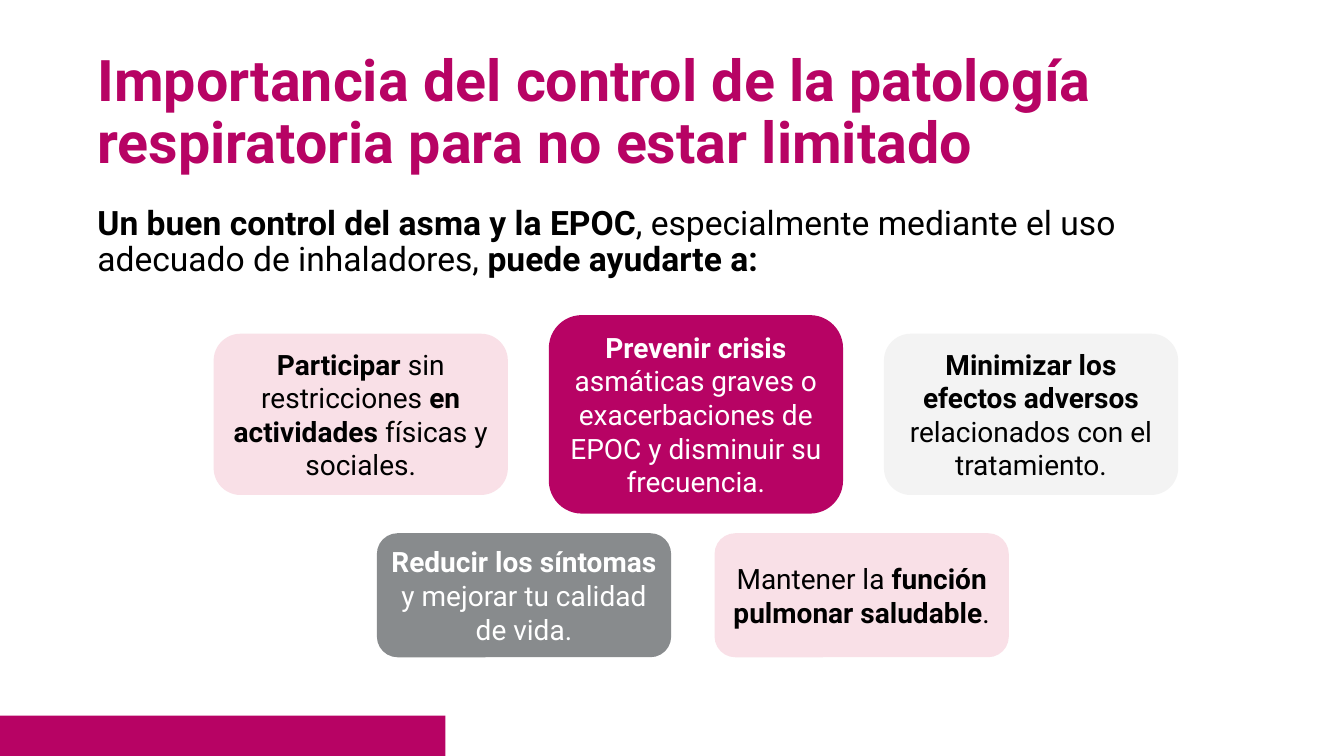
import dataclasses

import pptx
import pptx.dml.color
import pptx.enum.shapes
import pptx.enum.text
import pptx.util

Pt = pptx.util.Pt
SHAPES = pptx.enum.shapes.MSO_SHAPE
ANCHOR = pptx.enum.text.MSO_ANCHOR
ALIGN = pptx.enum.text.PP_ALIGN


@dataclasses.dataclass(frozen=True)
class Theme:
    font: str = "Roboto"
    magenta: str = "B70364"
    pink: str = "F9E0E7"
    gray: str = "888B8D"
    light: str = "F3F3F3"
    black: str = "000000"
    white: str = "FFFFFF"
    title_size: int = 41
    body_size: int = 24
    card_size: int = 20
    inset: float = 3.6


class Deck:
    def __init__(self, theme):
        self.theme = theme
        self.prs = pptx.Presentation()
        self.prs.slide_width, self.prs.slide_height = Pt(960), Pt(540)
        self.s = self.prs.slides.add_slide(self.prs.slide_layouts[5])

    def add_text(self, sp, runs, size, color, align, anchor, spacing=1.0):
        tf = sp.text_frame
        tf.word_wrap = True
        tf.auto_size = pptx.enum.text.MSO_AUTO_SIZE.NONE
        tf.vertical_anchor = anchor
        tf.margin_left = tf.margin_right = Pt(self.theme.inset)
        tf.margin_top = tf.margin_bottom = Pt(self.theme.inset)
        p = tf.paragraphs[0]
        p.alignment = align
        p.line_spacing = spacing
        for text, bold in runs:
            r = p.add_run()
            r.text = text
            r.font.name = self.theme.font
            r.font.size = Pt(size)
            r.font.bold = bold
            r.font.color.rgb = pptx.dml.color.RGBColor.from_string(color)

    def title(self, text, left, top, width, height):
        sp = self.s.shapes.title
        sp.left, sp.top, sp.width, sp.height = map(Pt, (left, top, width, height))
        self.add_text(sp, [(text, True)], self.theme.title_size, self.theme.magenta,
                      ALIGN.LEFT, ANCHOR.MIDDLE, 0.9)

    def body(self, runs, left, top, width, height):
        sp = self.s.shapes.add_textbox(*map(Pt, (left, top, width, height)))
        self.add_text(sp, runs, self.theme.body_size, self.theme.black,
                      ALIGN.LEFT, ANCHOR.TOP, 0.9)

    def box(self, kind, fill, left, top, width, height):
        sp = self.s.shapes.add_shape(kind, *map(Pt, (left, top, width, height)))
        sp.shadow.inherit = False
        sp.fill.solid()
        sp.fill.fore_color.rgb = pptx.dml.color.RGBColor.from_string(fill)
        sp.line.fill.background()
        return sp

    def card(self, runs, fill, color, left, middle, width, height):
        sp = self.box(SHAPES.ROUNDED_RECTANGLE, fill,
                      left, middle - height / 2, width, height)
        self.add_text(sp, runs, self.theme.card_size, color,
                      ALIGN.CENTER, ANCHOR.MIDDLE)

    def card_row(self, cards, left, middle, pitch, width):
        for i, (runs, fill, color, height) in enumerate(cards):
            self.card(runs, fill, color, left + i * pitch, middle, width, height)


def main():
    theme = Theme()
    deck = Deck(theme)
    margin, text_width, card_width = 66, 828, 210.2

    deck.box(SHAPES.RECTANGLE, theme.magenta, 0, 511.2, 318.2, 28.8)
    deck.title("Importancia del control de la patología respiratoria para no estar limitado",
               margin, 29, text_width, 104.4)
    deck.body([("Un buen control del asma y la EPOC", True),
               (", especialmente mediante el uso adecuado de inhaladores, ", False),
               ("puede ayudarte a:", True)],
              margin, 144, text_width, 83)

    top_cards = [
        ([("Participar", True), (" sin restricciones ", False),
          ("en actividades", True), (" físicas y sociales.", False)],
         theme.pink, theme.black, 115.2),
        ([("Prevenir crisis ", True),
          ("asmáticas graves o exacerbaciones de EPOC y disminuir su frecuencia.", False)],
         theme.magenta, theme.white, 141.8),
        ([("Minimizar los efectos adversos ", True),
          ("relacionados con el tratamiento.", False)],
         theme.light, theme.black, 115.2),
    ]
    bottom_cards = [
        ([("Reducir los síntomas ", True), ("y mejorar tu calidad de vida.", False)],
         theme.gray, theme.white, 88.6),
        ([("Mantener la ", False), ("función pulmonar saludable", True), (".", False)],
         theme.pink, theme.black, 88.6),
    ]
    deck.card_row(top_cards, 152.6, 296, 239.4, card_width)
    deck.card_row(bottom_cards, 269.2, 425.2, 241.2, card_width)

    deck.prs.save("out.pptx")


if __name__ == "__main__":
    main()
